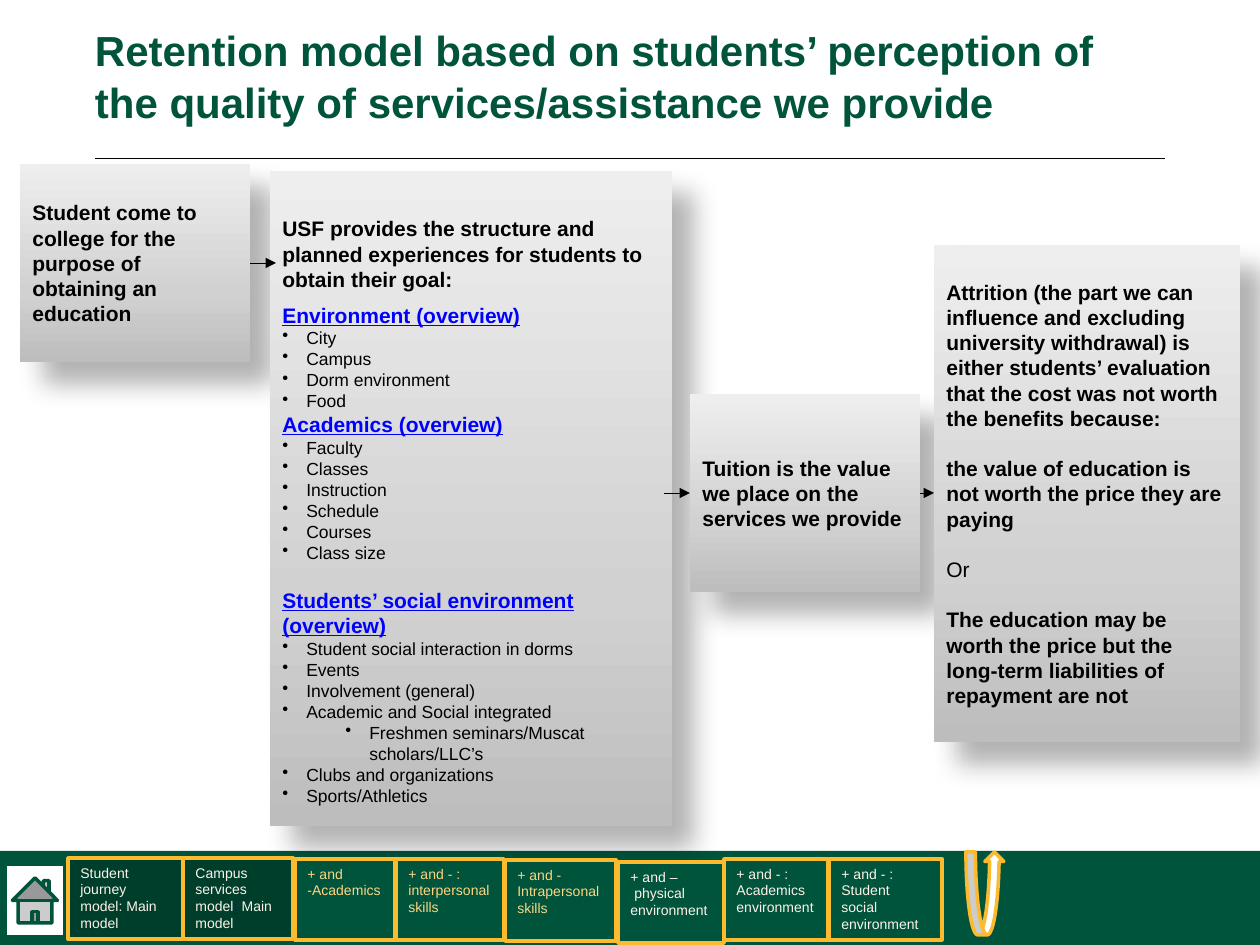
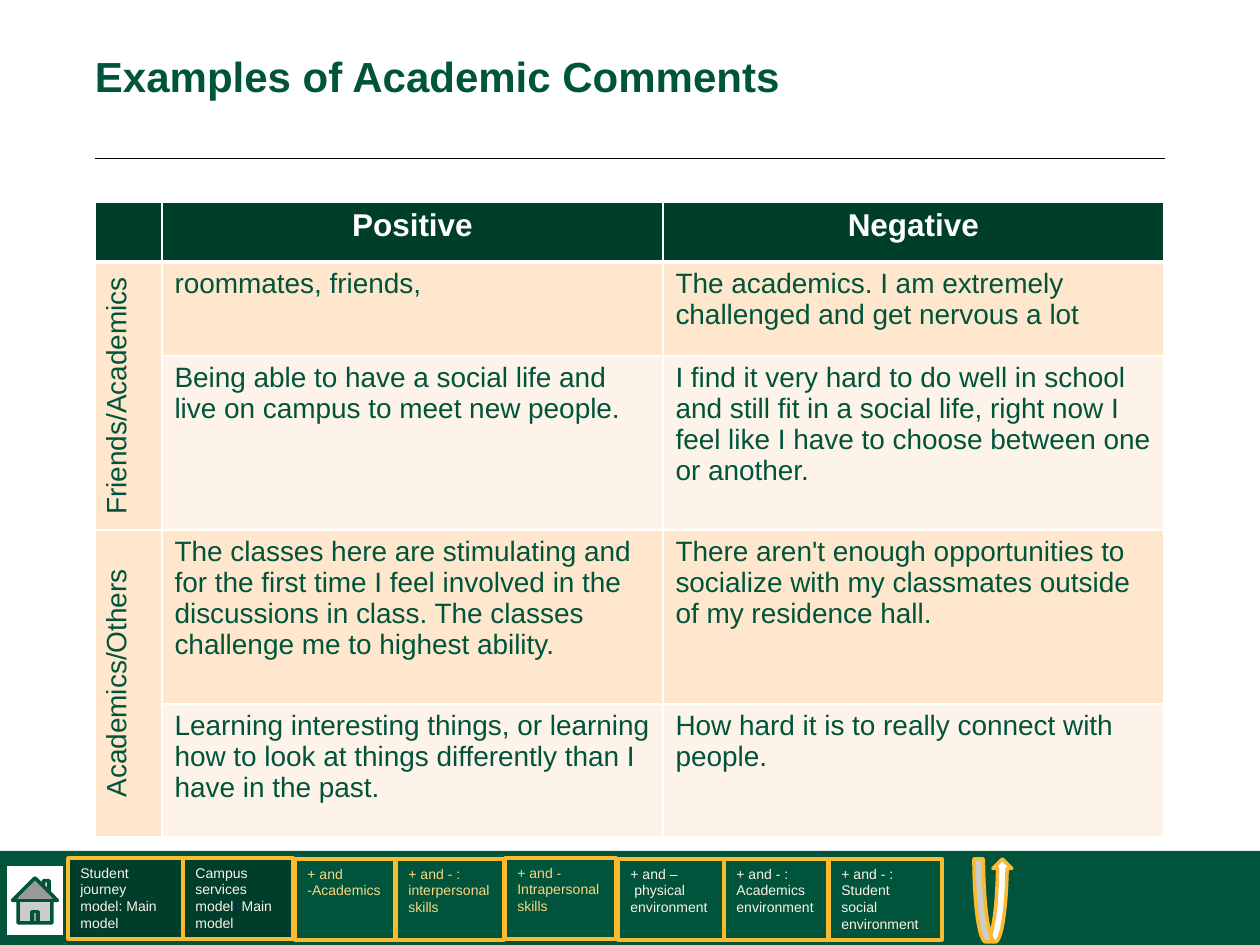
from copy import deepcopy
from dataclasses import dataclass

from lxml.etree import SubElement
from pptx import Presentation
from pptx.dml.color import RGBColor
from pptx.enum.shapes import MSO_CONNECTOR, MSO_SHAPE
from pptx.enum.text import MSO_ANCHOR, PP_ALIGN
from pptx.oxml.ns import qn
from pptx.util import Emu, Pt

EMU_PER_PX = 914400 / 126
COLORS = {
    "green": "00543C", "dark green": "003E2C", "gold": "FCBA2F", "pale gold": "FDD682",
    "cream": "FEF3E8", "peach": "FEE7CD", "white": "FFFFFF", "black": "000000",
    "link": "0000FF",
}
CARD_GRADIENT = [(0, "BDBDBD"), (0.35, "D1D1D1"), (1, "EEEEEE")]
# Each style: font attributes, then a colour name
STYLES = {
    "title": ({"size": Pt(24), "bold": True}, "green"),
    "statement": ({"size": Pt(12), "bold": True}, "black"),
    "plain": ({"size": Pt(12), "bold": False}, "black"),
    "overview": ({"size": Pt(12), "bold": True, "underline": True}, "link"),
    "item": ({"size": Pt(10), "bold": False}, "black"),
    "nav": ({"size": Pt(8)}, "cream"),
    "nav gold": ({"size": Pt(8)}, "pale gold"),
    "nav link": ({"size": Pt(8), "underline": True}, "link"),
    "table head": ({"size": Pt(18), "bold": True}, "white"),
    "table body": ({"size": Pt(16), "bold": False}, "green"),
}
BULLET_HANG = 24
SUB_BULLET_LEFT = 87


@dataclass
class Para:
    text: str
    style: str
    before: float = 0
    bullet_left: int = 0
    more_runs: tuple[tuple[str, str], ...] = ()


@dataclass
class Card:
    left: int
    top: int
    width: int
    height: int
    paras: list[Para]
    top_inset: int = 0


@dataclass
class NavButton:
    left: int
    top: int
    width: int
    fill: str
    paras: list[Para]


def px(length: float) -> Emu:
    return Emu(round(length * EMU_PER_PX))


def rgb(name: str) -> RGBColor:
    return RGBColor.from_string(COLORS[name])


def write(frame, paras: list[Para], align=PP_ALIGN.LEFT, line_spacing=None) -> None:
    """Fill a text frame, one styled paragraph per Para."""
    for index, para in enumerate(paras):
        paragraph = frame.add_paragraph() if index else frame.paragraphs[0]
        formats = {"alignment": align, "line_spacing": line_spacing,
                   "space_before": Pt(para.before)}
        for attribute, value in formats.items():
            setattr(paragraph, attribute, value)
        if para.bullet_left:
            properties = paragraph._p.get_or_add_pPr()
            properties.set("marL", str(px(para.bullet_left)))
            properties.set("indent", str(-px(BULLET_HANG)))
            SubElement(properties, qn("a:buChar"), char="•")
        for text, style in ((para.text, para.style), *para.more_runs):
            run = paragraph.add_run()
            run.text = text
            font_formats, color = STYLES[style]
            for attribute, value in {"name": "Arial", **font_formats}.items():
                setattr(run.font, attribute, value)
            run.font.color.rgb = rgb(color)


def add_block(slide, kind, left: int, top: int, width: int, height: int,
              fill: str | None = None, outline: str | None = None):
    block = slide.shapes.add_shape(kind, px(left), px(top), px(width), px(height))
    block.shadow.inherit = False
    if fill:
        block.fill.solid()
        block.fill.fore_color.rgb = rgb(fill)
    if outline:
        block.line.color.rgb = rgb(outline)
        block.line.width = Pt(2)
    else:
        block.line.fill.background()
    return block


def add_rule(slide, start: tuple[int, int], end: tuple[int, int], arrow: bool = False) -> None:
    rule = slide.shapes.add_connector(MSO_CONNECTOR.STRAIGHT, *map(px, start + end))
    rule.line.color.rgb = rgb("black")
    rule.line.width = Pt(0.5)
    if arrow:
        SubElement(rule.line._get_or_add_ln(), qn("a:tailEnd"), type="triangle")
    SubElement(rule._element.spPr, qn("a:effectLst"))


def add_card(slide, card: Card) -> None:
    """Draw a grey gradient box with a soft shadow to the lower right."""
    block = add_block(slide, MSO_SHAPE.RECTANGLE, card.left, card.top, card.width, card.height)
    block.fill.gradient()
    block.fill.gradient_angle = 90
    properties = block._element.spPr
    stops = properties.find(qn("a:gradFill")).find(qn("a:gsLst"))
    stops.append(deepcopy(stops[-1]))
    for stop, (position, color) in zip(block.fill.gradient_stops, CARD_GRADIENT):
        stop.position = position
        stop.color.rgb = RGBColor.from_string(color)
    shadow = SubElement(properties.find(qn("a:effectLst")), qn("a:outerShdw"),
                        blurRad=str(Pt(15)), dist=str(Pt(18)), dir="2700000", rotWithShape="0")
    shade = SubElement(shadow, qn("a:srgbClr"), val=COLORS["black"])
    SubElement(shade, qn("a:alpha"), val="30000")
    frame = block.text_frame
    frame.word_wrap = True
    if card.top_inset:
        frame.vertical_anchor = MSO_ANCHOR.TOP
        frame.margin_top = px(card.top_inset)
    write(frame, card.paras)


def add_page(deck, title: str):
    """Add a slide with the title, the rule below it and the bottom band."""
    slide = deck.slides.add_slide(deck.slide_layouts[6])
    add_block(slide, MSO_SHAPE.RECTANGLE, 0, 851, 1260, 94, "green")
    add_rule(slide, (1165, 158), (95, 158))
    heading = slide.shapes.add_textbox(px(95), px(16), px(1070), px(117)).text_frame
    formats = {"word_wrap": True, "vertical_anchor": MSO_ANCHOR.MIDDLE, "margin_left": 0,
               "margin_right": 0, "margin_top": 0, "margin_bottom": 0}
    for attribute, value in formats.items():
        setattr(heading, attribute, value)
    write(heading, [Para(title, "title")], line_spacing=Pt(30))
    return slide


def add_navigation(slide, intrapersonal_top: int, physical_top: int,
                   back_arrow: tuple[int, int]) -> None:
    buttons = [
        NavButton(396, 859, 108, "green", [Para("+ and - : interpersonal skills", "nav gold")]),
        NavButton(295, 859, 100, "green", [Para("+ and -Academics", "nav gold")]),
        NavButton(505, intrapersonal_top, 111, "green",
                  [Para("+ and - Intrapersonal skills", "nav gold")]),
        NavButton(68, 858, 115, "dark green", [Para("Student journey model: Main model", "nav")]),
        NavButton(183, 858, 110, "dark green",
                  [Para("Campus services model", "nav",
                        more_runs=((":", "nav link"), (" Main model", "nav")))]),
        NavButton(618, physical_top, 106, "green",
                  [Para("+ and –", "nav"), Para(" physical environment", "nav")]),
        NavButton(724, 859, 104, "green", [Para("+ and - : Academics environment", "nav")]),
        NavButton(829, 859, 113, "green", [Para("+ and - : Student social environment", "nav")]),
    ]
    add_block(slide, MSO_SHAPE.ACTION_BUTTON_HOME, 5, 864, 60, 73, "white", "green")
    for button in buttons:
        block = add_block(slide, MSO_SHAPE.RECTANGLE, button.left, button.top, button.width, 81,
                          button.fill, "gold")
        block.text_frame.word_wrap = True
        block.text_frame.vertical_anchor = MSO_ANCHOR.TOP
        write(block.text_frame, button.paras)
    add_block(slide, MSO_SHAPE.CURVED_UP_ARROW, *back_arrow, 38, 83, "white", "gold")


def items(*texts: str, left: int = BULLET_HANG) -> list[Para]:
    return [Para(text, "item", bullet_left=left) for text in texts]


def add_retention_model(deck) -> None:
    slide = add_page(deck, "Retention model based on students’ perception of the quality of "
                           "services/assistance we provide")
    university = [
        Para("USF provides the structure and planned experiences for students to obtain "
             "their goal:", "statement"),
        Para("Environment (overview)", "overview", before=6),
        *items("City", "Campus", "Dorm environment", "Food"),
        Para("Academics (overview)", "overview"),
        *items("Faculty", "Classes", "Instruction", "Schedule", "Courses", "Class size"),
        Para("Students’ social environment", "overview", before=14),
        Para("(overview)", "overview"),
        *items("Student social interaction in dorms", "Events", "Involvement (general)",
               "Academic and Social integrated"),
        *items("Freshmen seminars/Muscat scholars/LLC’s", left=SUB_BULLET_LEFT),
        *items("Clubs and organizations", "Sports/Athletics"),
    ]
    attrition = [
        Para("Attrition (the part we can influence and excluding university withdrawal) is "
             "either students’ evaluation that the cost was not worth the benefits because:",
             "statement"),
        Para("the value of education is not worth the price they are paying", "statement", 14.4),
        Para("Or", "plain", 14.4),
        Para("The education may be worth the price but the long-term liabilities of repayment "
             "are not", "statement", 14.4),
    ]
    cards = [
        Card(20, 164, 230, 198, [Para("Student come to college for the purpose of obtaining "
                                      "an education", "statement")]),
        Card(270, 171, 402, 655, university, top_inset=45),
        Card(690, 394, 230, 198, [Para("Tuition is the value we place on the services we "
                                       "provide", "statement")]),
        Card(934, 245, 306, 497, attrition),
    ]
    for card in cards:
        add_card(slide, card)
    for start, end, height in [(250, 276, 263), (664, 690, 493), (920, 934, 493)]:
        add_rule(slide, (start, height), (end, height), arrow=True)
    add_navigation(slide, intrapersonal_top=860, physical_top=862, back_arrow=(966, 852))


def format_cell(cell, fill: str, bottom_border: float) -> None:
    properties = cell._tc.get_or_add_tcPr()
    borders = {"a:lnL": 1, "a:lnR": 1, "a:lnT": 1, "a:lnB": bottom_border}
    for side, width in borders.items():
        border = SubElement(properties, qn(side), w=str(Pt(width)))
        SubElement(SubElement(border, qn("a:solidFill")), qn("a:srgbClr"), val=COLORS["white"])
    cell.fill.solid()
    cell.fill.fore_color.rgb = rgb(fill)


def add_academic_comments(deck) -> None:
    slide = add_page(deck, "Examples of Academic Comments")
    comments = [
        ("", "Positive", "Negative"),
        ("Friends/Academics", "roommates, friends,",
         "The academics. I am extremely challenged and get nervous a lot"),
        ("", "Being able to have a social life and live on campus to meet new people.",
         "I find it very hard to do well in school and still fit in a social life, right now "
         "I feel like I have to choose between one or another."),
        ("Academics/Others",
         "The classes here are stimulating and for the first time I feel involved in the "
         "discussions in class. The classes challenge me to highest ability.",
         "There aren't enough opportunities to socialize with my classmates outside of my "
         "residence hall."),
        ("", "Learning interesting things, or learning how to look at things differently than "
             "I have in the past.",
         "How hard it is to really connect with people."),
    ]
    widths, heights = (67, 501, 501), (60, 94, 174, 174, 133)
    table = slide.shapes.add_table(len(heights), len(widths), px(95), px(202),
                                   px(sum(widths)), px(sum(heights))).table
    for column, width in zip(table.columns, widths):
        column.width = px(width)
    for row, height in zip(table.rows, heights):
        row.height = px(height)
    for first in (1, 3):
        table.cell(first, 0).merge(table.cell(first + 1, 0))
    for row, texts in enumerate(comments):
        is_head = row == 0
        for column, text in enumerate(texts):
            cell = table.cell(row, column)
            is_group = column == 0
            fill = "dark green" if is_head else "peach" if is_group or row % 2 else "cream"
            format_cell(cell, fill, bottom_border=3 if is_head else 1)
            if is_group and text:
                cell._tc.get_or_add_tcPr().set("vert", "vert270")
            if text:
                write(cell.text_frame, [Para(text, "table head" if is_head else "table body")],
                      PP_ALIGN.CENTER if is_head or is_group else PP_ALIGN.LEFT)
    add_navigation(slide, intrapersonal_top=858, physical_top=859, back_arrow=(974, 859))


def main() -> None:
    deck = Presentation()
    deck.slide_width, deck.slide_height = px(1260), px(945)
    add_retention_model(deck)
    add_academic_comments(deck)
    deck.save("out.pptx")


if __name__ == "__main__":
    main()
